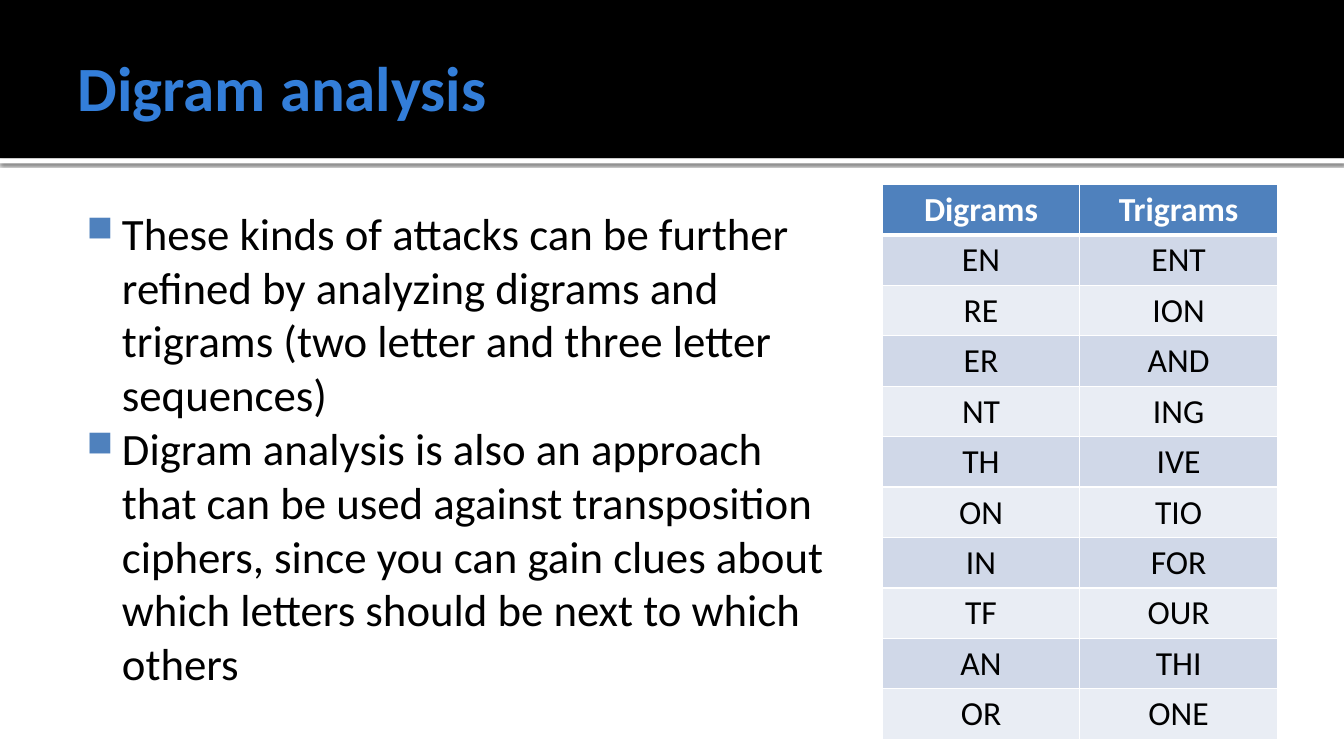
from lxml.etree import SubElement
from pptx import Presentation
from pptx.dml.color import RGBColor
from pptx.enum.shapes import MSO_SHAPE as SHAPE
from pptx.enum.text import MSO_ANCHOR as ANCHOR, PP_ALIGN as ALIGN
from pptx.oxml import parse_xml
from pptx.oxml.ns import nsdecls, qn
from pptx.util import Inches, Pt

COLORS = {
    "band": "000000", "rule": "FFFFFF", "title": "337ED9", "text": "000000",
    "accent": "4F81BD", "head_text": "FFFFFF", "border": "FFFFFF",
    "odd": "D0D8E8", "even": "E9EDF4",
}
TITLE_FONT = {"size": Pt(45), "bold": True}
BODY_FONT = {"size": Pt(32), "bold": False}
HEAD_FONT = {"size": Pt(24), "bold": True}
CELL_FONT = {"size": Pt(24), "bold": False}

BULLETS = [
    "These kinds of attacks can be further refined by analyzing digrams and "
    "trigrams (two letter and three letter sequences)",
    "Digram analysis is also an approach that can be used against "
    "transposition ciphers, since you can gain clues about which letters "
    "should be next to which others",
]
NGRAMS = [
    ("Digrams", "Trigrams"), ("EN", "ENT"), ("RE", "ION"), ("ER", "AND"),
    ("NT", "ING"), ("TH", "IVE"), ("ON", "TIO"), ("IN", "FOR"),
    ("TF", "OUR"), ("AN", "THI"), ("OR", "ONE"),
]


def rgb(name):
    return RGBColor.from_string(COLORS[name])


def add_run(p, text, color, fmt):
    r = p.add_run()
    r.text = text
    r.font.name = "Calibri"
    r.font.color.rgb = rgb(color)
    for key, value in fmt.items():
        setattr(r.font, key, value)


def add_bar(s, x, y, w, h, color):
    sp = s.shapes.add_shape(SHAPE.RECTANGLE, Inches(x), Inches(y), Inches(w), Inches(h))
    sp.shadow.inherit = False
    sp.fill.solid()
    sp.fill.fore_color.rgb = rgb(color)
    sp.line.fill.background()
    return sp


def add_text_frame(s, x, y, w, h, margins):
    """Add a wrapping text box; margins run left, top, right, bottom."""
    tf = s.shapes.add_textbox(Inches(x), Inches(y), Inches(w), Inches(h)).text_frame
    tf.word_wrap = True
    for side, margin in zip(("left", "top", "right", "bottom"), margins):
        setattr(tf, f"margin_{side}", Inches(margin))
    return tf


def add_header(s, x, y, w, h):
    rule = add_bar(s, x, y + h, w, 0.05, "rule")
    effects = rule._element.spPr.find(qn("a:effectLst"))
    effects.append(parse_xml(
        f'<a:outerShdw {nsdecls("a")} blurRad="{Pt(2.5)}" dist="{Pt(0.8)}" '
        'dir="5400000" rotWithShape="0"><a:srgbClr val="000000">'
        '<a:alpha val="60000"/></a:srgbClr></a:outerShdw>'))
    add_bar(s, x, y, w, h, "band")
    tf = add_text_frame(s, x + 0.67, y + 0.17, w - 1.33, h - 0.2, (0.1, 0.05, 0.05, 0.05))
    tf.vertical_anchor = ANCHOR.MIDDLE
    add_run(tf.paragraphs[0], "Digram analysis", "title", TITLE_FONT)


def set_bullet(p):
    pPr = p._p.get_or_add_pPr()
    pPr.set("marL", str(Inches(0.48)))
    pPr.set("indent", str(Inches(-0.35)))
    SubElement(SubElement(pPr, qn("a:buClr")), qn("a:srgbClr"), val=COLORS["accent"])
    SubElement(pPr, qn("a:buSzPct"), val="80000")
    SubElement(pPr, qn("a:buChar"), char="■")


def add_bullets(s, x, y, w, h):
    tf = add_text_frame(s, x, y, w, h, (0.06, 0.1, 0.1, 0.05))
    for i, text in enumerate(BULLETS):
        p = tf.add_paragraph() if i else tf.paragraphs[0]
        set_bullet(p)
        add_run(p, text, "text", BODY_FONT)


def set_borders(cell, top, bottom):
    """Draw the four cell borders, 1 pt at the sides."""
    tcPr = cell._tc.get_or_add_tcPr()
    widths = {"lnL": 1, "lnR": 1, "lnT": top, "lnB": bottom}
    for i, (tag, width) in enumerate(widths.items()):
        tcPr.insert(i, parse_xml(
            f'<a:{tag} {nsdecls("a")} w="{Pt(width)}"><a:solidFill>'
            f'<a:srgbClr val="{COLORS["border"]}"/></a:solidFill></a:{tag}>'))


def add_ngram_table(s, x, y, w, row_h):
    rows, cols = len(NGRAMS), len(NGRAMS[0])
    table = s.shapes.add_table(rows, cols, Inches(x), Inches(y),
                               Inches(w), Inches(row_h * rows)).table
    for i, values in enumerate(NGRAMS):
        table.rows[i].height = Inches(row_h)
        fill = "accent" if i == 0 else ("odd" if i % 2 else "even")
        color, fmt = ("text", CELL_FONT) if i else ("head_text", HEAD_FONT)
        for j, text in enumerate(values):
            cell = table.cell(i, j)
            cell.fill.solid()
            cell.fill.fore_color.rgb = rgb(fill)
            set_borders(cell, 3 if i == 1 else 1, 3 if i == 0 else 1)
            p = cell.text_frame.paragraphs[0]
            p.alignment = ALIGN.CENTER
            add_run(p, text, color, fmt)


def main():
    prs = Presentation()
    prs.slide_width, prs.slide_height = Inches(13.33), Inches(7.5)
    s = prs.slides.add_slide(prs.slide_layouts[6])
    add_header(s, 0, 0, 13.33, 1.57)
    add_bullets(s, 0.67, 1.94, 7.83, 5.06)
    add_ngram_table(s, 8.75, 1.83, 3.92, 0.45)
    prs.save("out.pptx")


if __name__ == "__main__":
    main()
